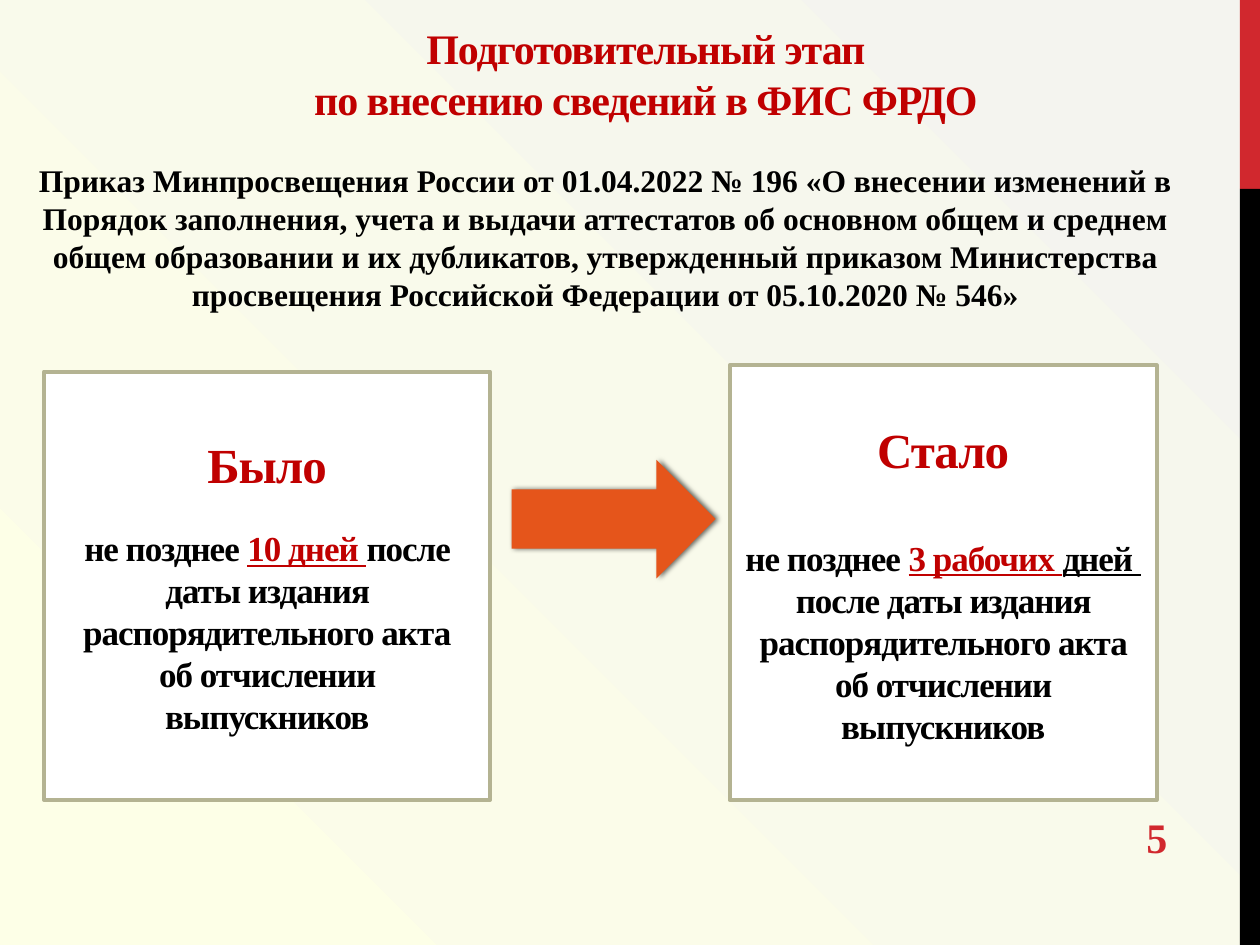
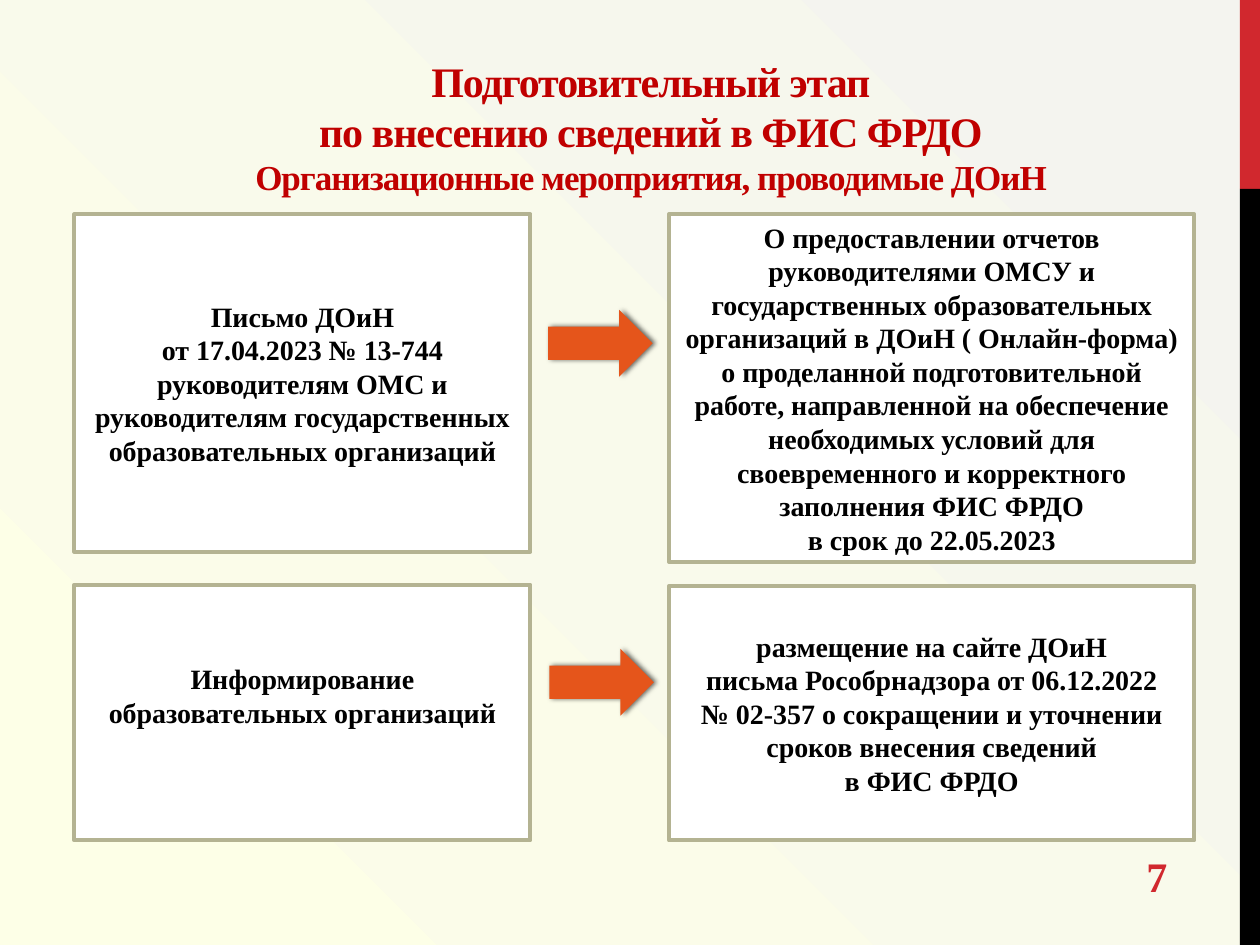
from dataclasses import dataclass

from lxml.etree import SubElement
from pptx import Presentation
from pptx.dml.color import RGBColor
from pptx.enum.shapes import MSO_SHAPE as Preset
from pptx.enum.text import MSO_ANCHOR as Anchor, PP_ALIGN as Align
from pptx.oxml import parse_xml
from pptx.oxml.ns import nsdecls, qn
from pptx.util import Inches, Pt


@dataclass(frozen=True)
class Theme:
    font: str = "Times New Roman"
    ink: str = "000000"
    accent: str = "C00000"
    band: str = "D1282E"
    paper: str = "FFFFFF"
    border: str = "B4B392"
    arrow: str = "E5551B"
    glow: str = "FDFFE7"
    haze: str = "F4F4EF"
    title: int = 24
    subtitle: int = 20
    heading: int = 28
    term: int = 20
    order: int = 18
    body: int = 16
    tight: int = -60


@dataclass(frozen=True)
class Span:
    text: str
    size: int
    color: str = Theme.ink
    underline: bool = False
    tight: bool = False


@dataclass(frozen=True)
class Card:
    place: tuple
    paragraphs: list
    gap_after_first: int = 0
    bottom_inset: float = 0.05


THEME = Theme()
WIDTH, HEIGHT = 10, 7.5
BAND_WIDTH = 0.16
NUMBER_LEFT, NUMBER_HEIGHT = 9, 0.4


def heading(text):
    return [Span(text, THEME.heading, THEME.accent, tight=True)]


def term(text, color=THEME.ink, underline=False):
    return Span(text, THEME.term, color, underline, tight=True)


def body(*lines):
    return [[Span(line, THEME.body)] for line in lines]


TITLE = ["Подготовительный этап", "по внесению сведений в ФИС ФРДО"]
ORDER = (
    "Приказ Минпросвещения России от 01.04.2022 № 196 «О внесении изменений в Порядок "
    "заполнения, учета и выдачи аттестатов об основном общем и среднем общем образовании "
    "и их дубликатов, утвержденный приказом Министерства просвещения Российской Федерации "
    "от 05.10.2020 № 546»"
)

PAGES = [
    {
        "number": 5,
        "number_top": 6.44,
        "title_place": (0.75, 0.13, 8.75, 0.9),
        "subtitle": None,
        "order_place": (0.2, 1.23, 9.21, 1.4),
        "cards": [
            Card((0.35, 2.95, 3.54, 3.4), [
                heading("Было"),
                [term("не позднее "), term("10 дней ", THEME.accent, True),
                 term("после даты издания распорядительного акта")],
                [term("об отчислении выпускников")],
            ], gap_after_first=19),
            Card((5.79, 2.9, 3.39, 3.45), [
                heading("Стало"),
                [term("не позднее "), term("3 рабочих ", THEME.accent, True),
                 term("дней ", underline=True)],
                [term("после даты издания распорядительного акта об отчислении выпускников")],
            ], gap_after_first=33),
        ],
        "arrows": [(4.06, 3.65, 1.62, 0.94)],
    },
    {
        "number": 7,
        "number_top": 6.75,
        "title_place": (0.83, 0.36, 8.67, 1.26),
        "subtitle": "Организационные мероприятия, проводимые ДОиН",
        "order_place": None,
        "cards": [
            Card((0.59, 1.7, 3.62, 2.68), body(
                "Письмо ДОиН",
                "от 17.04.2023 № 13-744",
                "руководителям ОМС и",
                "руководителям государственных",
                "образовательных организаций",
            )),
            Card((0.59, 4.64, 3.62, 2.03), body(
                "Информирование образовательных организаций",
            ), bottom_inset=0.32),
            Card((5.31, 1.7, 4.17, 2.76), body(
                "О предоставлении отчетов руководителями ОМСУ и государственных "
                "образовательных организаций в ДОиН ( Онлайн-форма) о проделанной "
                "подготовительной работе, направленной на обеспечение необходимых условий "
                "для своевременного и корректного заполнения ФИС ФРДО",
                "в срок до 22.05.2023",
            )),
            Card((5.31, 4.65, 4.17, 2.02), body(
                "размещение на сайте ДОиН",
                "письма Рособрнадзора от 06.12.2022",
                "№ 02-357 о сокращении и уточнении сроков внесения сведений",
                "в ФИС ФРДО",
            )),
        ],
        "arrows": [(4.35, 2.46, 0.83, 0.53), (4.36, 5.15, 0.83, 0.53)],
    },
]


def paint_background(master):
    """Set a radial gradient that spreads from the bottom left corner."""
    master.background.fill.gradient()
    old = master.element.find(".//" + qn("a:gradFill"))
    new = parse_xml(
        f'<a:gradFill {nsdecls("a")} rotWithShape="1"><a:gsLst>'
        f'<a:gs pos="0"><a:srgbClr val="{THEME.glow}"/></a:gs>'
        f'<a:gs pos="99000"><a:srgbClr val="{THEME.haze}"/></a:gs></a:gsLst>'
        '<a:path path="circle"><a:fillToRect t="100000" r="100000"/></a:path></a:gradFill>'
    )
    old.getparent().replace(old, new)


def write(frame, paragraphs, align=Align.CENTER, anchor=Anchor.MIDDLE):
    """Fill a text frame with paragraphs, each a list of spans."""
    frame.word_wrap = True
    frame.vertical_anchor = anchor
    for index, spans in enumerate(paragraphs):
        para = frame.paragraphs[0] if index == 0 else frame.add_paragraph()
        para.alignment = align
        for span in spans:
            run = para.add_run()
            run.text = span.text
            font = run.font
            font.name, font.size, font.bold = THEME.font, Pt(span.size), True
            font.underline = span.underline
            font.color.rgb = RGBColor.from_string(span.color)
            if span.tight:
                run._r.get_or_add_rPr().set("spc", str(THEME.tight))


def add_text(page, place, paragraphs, **layout):
    box = page.shapes.add_textbox(*map(Inches, place))
    write(box.text_frame, paragraphs, **layout)


def add_block(page, preset, place, fill, border=None):
    block = page.shapes.add_shape(preset, *map(Inches, place))
    block.shadow.inherit = False
    block.fill.solid()
    block.fill.fore_color.rgb = RGBColor.from_string(fill)
    if border:
        block.line.color.rgb = RGBColor.from_string(border)
        block.line.width = Pt(2.25)
    else:
        block.line.fill.background()
    return block


def add_card(page, card):
    block = add_block(page, Preset.RECTANGLE, card.place, THEME.paper, THEME.border)
    frame = block.text_frame
    write(frame, card.paragraphs)
    frame.margin_bottom = Inches(card.bottom_inset)
    frame.paragraphs[0].space_after = Pt(card.gap_after_first)


def add_arrow(page, place):
    arrow = add_block(page, Preset.RIGHT_ARROW, place, THEME.arrow)
    effects = arrow.element.spPr.find(qn("a:effectLst"))
    shadow = SubElement(effects, qn("a:outerShdw"), blurRad=str(Pt(3)),
                        dist=str(Pt(1.5)), dir="0", rotWithShape="0")
    color = SubElement(shadow, qn("a:srgbClr"), val=THEME.ink)
    SubElement(color, qn("a:alpha"), val="60000")


def add_frame(page, content):
    """Add the side bands, title and page number that every slide has."""
    left, split = WIDTH - BAND_WIDTH, HEIGHT / 5
    add_block(page, Preset.RECTANGLE, (left, 0, BAND_WIDTH, split), THEME.band)
    add_block(page, Preset.RECTANGLE, (left, split, BAND_WIDTH, HEIGHT - split), THEME.ink)
    lines = [[Span(line, THEME.title, THEME.accent, tight=True)] for line in TITLE]
    if content["subtitle"]:
        lines.append([Span(content["subtitle"], THEME.subtitle, THEME.accent, tight=True)])
    add_text(page, content["title_place"], lines, anchor=Anchor.BOTTOM)
    number = Span(str(content["number"]), THEME.title, THEME.band)
    place = (NUMBER_LEFT, content["number_top"], left - NUMBER_LEFT, NUMBER_HEIGHT)
    add_text(page, place, [[number]], align=Align.LEFT)


def main():
    deck = Presentation()
    deck.slide_width, deck.slide_height = Inches(WIDTH), Inches(HEIGHT)
    paint_background(deck.slide_master)
    for content in PAGES:
        page = deck.slides.add_slide(deck.slide_layouts[6])
        add_frame(page, content)
        if content["order_place"]:
            add_text(page, content["order_place"], [[Span(ORDER, THEME.order)]],
                     anchor=Anchor.TOP)
        for card in content["cards"]:
            add_card(page, card)
        for place in content["arrows"]:
            add_arrow(page, place)
    deck.save("out.pptx")


if __name__ == "__main__":
    main()
